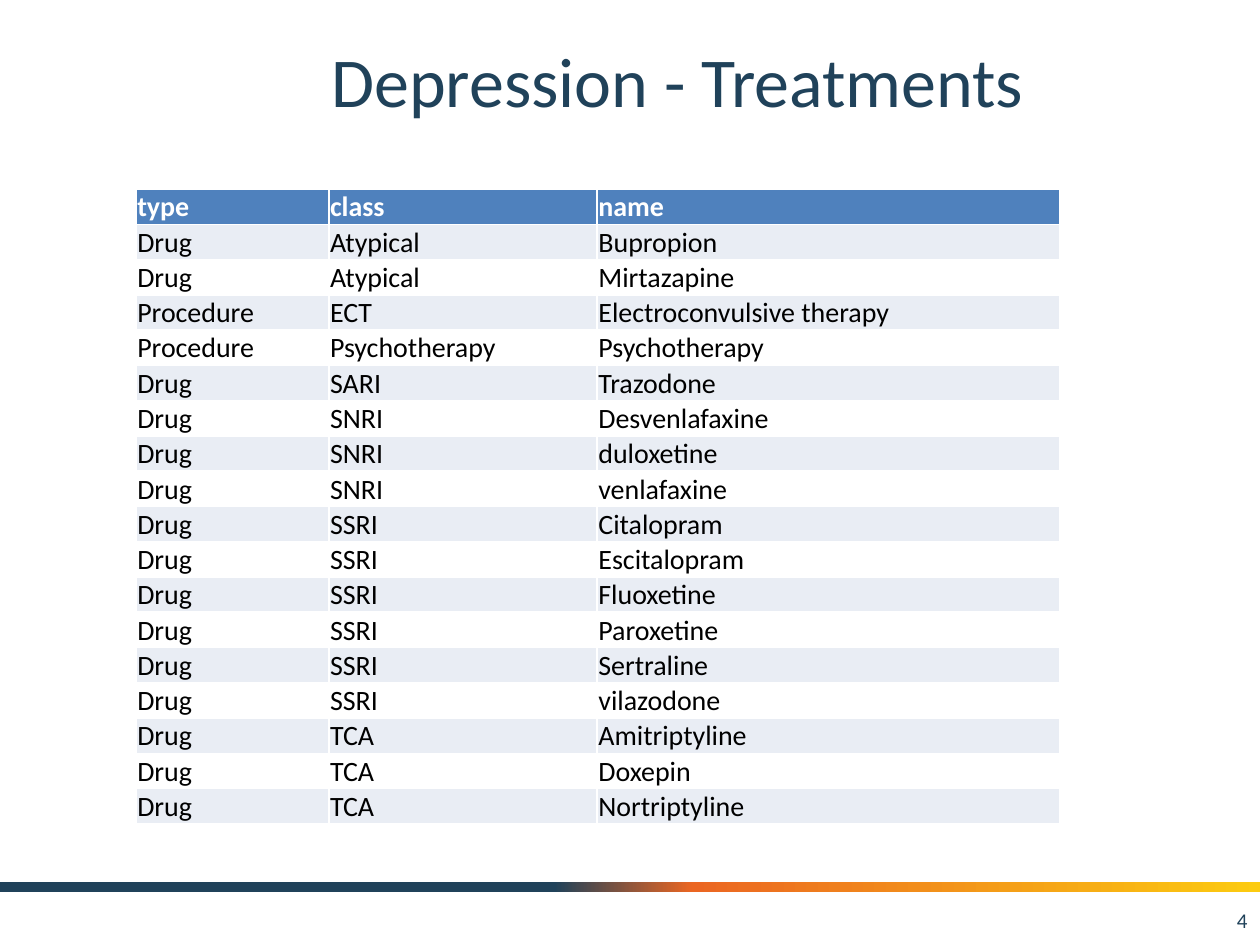
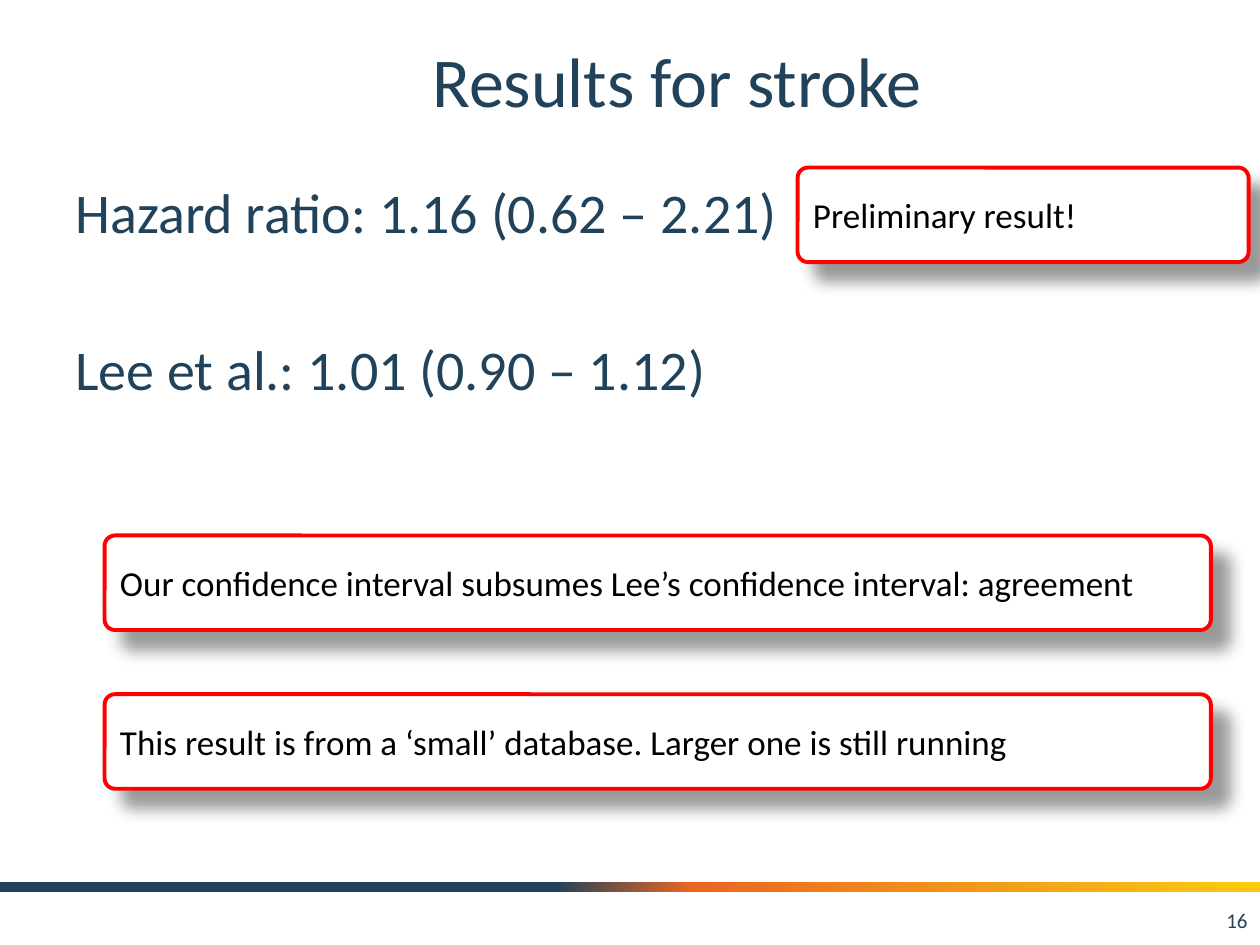
from lxml.etree import SubElement
from pptx import Presentation
from pptx.dml.color import RGBColor
from pptx.enum.shapes import MSO_SHAPE
from pptx.enum.text import MSO_ANCHOR, PP_ALIGN
from pptx.oxml.ns import qn
from pptx.util import Inches, Pt

# Shared look
FONT = "Calibri"
NAVY = RGBColor(0x20, 0x42, 0x5A)
ORANGE = RGBColor(0xEB, 0x66, 0x22)
YELLOW = RGBColor(0xFC, 0xCB, 0x10)
HEADER_BLUE = RGBColor(0x4F, 0x81, 0xBD)
BAND_GREY = RGBColor(0xE9, 0xED, 0xF4)
WHITE = RGBColor(0xFF, 0xFF, 0xFF)
BLACK = RGBColor(0x00, 0x00, 0x00)
RED = RGBColor(0xFF, 0x00, 0x00)
FOOTER_STOPS = [(44, NAVY), (55, ORANGE), (100, YELLOW)]

# Treatments: (type, class, names)
TREATMENTS = [
    ("Drug", "Atypical", ["Bupropion", "Mirtazapine"]),
    ("Procedure", "ECT", ["Electroconvulsive therapy"]),
    ("Procedure", "Psychotherapy", ["Psychotherapy"]),
    ("Drug", "SARI", ["Trazodone"]),
    ("Drug", "SNRI", ["Desvenlafaxine", "duloxetine", "venlafaxine"]),
    ("Drug", "SSRI", ["Citalopram", "Escitalopram", "Fluoxetine", "Paroxetine",
                      "Sertraline", "vilazodone"]),
    ("Drug", "TCA", ["Amitriptyline", "Doxepin", "Nortriptyline"]),
]
COLUMN_WIDTHS = [1.53, 2.13, 3.67]
ROW_HEIGHT = 0.28


def format_paragraph(paragraph, size, color, alignment=PP_ALIGN.LEFT, bold=False):
    paragraph.alignment = alignment
    for run in paragraph.runs:
        run.font.name = FONT
        run.font.size = Pt(size)
        run.font.color.rgb = color
        run.font.bold = bold


def add_text(slide, box, lines, size, alignment=PP_ALIGN.LEFT,
             anchor=MSO_ANCHOR.MIDDLE):
    shape = slide.shapes.add_textbox(*map(Inches, box))
    text_frame = shape.text_frame
    text_frame.word_wrap = True
    text_frame.vertical_anchor = anchor
    text_frame.text = "\n".join(lines)
    for paragraph in text_frame.paragraphs:
        format_paragraph(paragraph, size, NAVY, alignment)
    return text_frame


def add_footer_band(slide):
    band = slide.shapes.add_shape(
        MSO_SHAPE.RECTANGLE, 0, Inches(7), Inches(10), Inches(0.08))
    band.shadow.inherit = False
    band.line.fill.background()
    band.fill.gradient()
    band.fill.gradient_angle = 0
    stop_list = band._element.spPr.find(qn("a:gradFill")).find(qn("a:gsLst"))
    for old_stop in list(stop_list):
        stop_list.remove(old_stop)
    for percent, color in FOOTER_STOPS:
        stop = SubElement(stop_list, qn("a:gs"), pos=str(percent * 1000))
        SubElement(stop, qn("a:srgbClr"), val=str(color))


def add_base_slide(presentation, title, number):
    slide = presentation.slides.add_slide(presentation.slide_layouts[6])
    add_footer_band(slide)
    add_text(slide, (1.25, 0.17, 8.25, 0.92), [title], 40, PP_ALIGN.CENTER)
    add_text(slide, (7.67, 7.1, 2.33, 0.4), [str(number)], 12, PP_ALIGN.RIGHT)
    return slide


def add_treatment_table(slide, left, top):
    rows = [("type", "class", "name")]
    rows += [(kind, group, name) for kind, group, names in TREATMENTS
             for name in names]
    table = slide.shapes.add_table(
        len(rows), len(COLUMN_WIDTHS), Inches(left), Inches(top),
        Inches(sum(COLUMN_WIDTHS)), Inches(ROW_HEIGHT * len(rows))).table
    for column, width in zip(table.columns, COLUMN_WIDTHS):
        column.width = Inches(width)
    for row_index, values in enumerate(rows):
        table.rows[row_index].height = Inches(ROW_HEIGHT)
        is_header = row_index == 0
        band_color = BAND_GREY if row_index % 2 else WHITE
        for column_index, value in enumerate(values):
            cell = table.cell(row_index, column_index)
            cell.fill.solid()
            cell.fill.fore_color.rgb = HEADER_BLUE if is_header else band_color
            cell.margin_left = cell.margin_right = cell.margin_top = Inches(0.01)
            cell.margin_bottom = 0
            cell.vertical_anchor = MSO_ANCHOR.BOTTOM
            cell.text_frame.text = value
            format_paragraph(cell.text_frame.paragraphs[0], 16,
                             WHITE if is_header else BLACK, bold=is_header)


def add_drop_shadow(shape):
    shape.shadow.inherit = False
    effects = shape._element.spPr.find(qn("a:effectLst"))
    shadow = SubElement(effects, qn("a:outerShdw"), blurRad=str(Pt(9)),
                        dist=str(Pt(14)), dir=str(45 * 60000),
                        algn="tl", rotWithShape="0")
    color = SubElement(shadow, qn("a:srgbClr"), val=str(BLACK))
    SubElement(color, qn("a:alpha"), val="40000")


def add_callout(slide, left, top, width, text):
    callout = slide.shapes.add_shape(
        MSO_SHAPE.ROUNDED_RECTANGLE, Inches(left), Inches(top),
        Inches(width), Inches(0.75))
    callout.adjustments[0] = 0.11
    callout.fill.solid()
    callout.fill.fore_color.rgb = WHITE
    callout.line.color.rgb = RED
    callout.line.width = Pt(2.25)
    add_drop_shadow(callout)
    text_frame = callout.text_frame
    text_frame.word_wrap = True
    text_frame.vertical_anchor = MSO_ANCHOR.MIDDLE
    text_frame.text = text
    format_paragraph(text_frame.paragraphs[0], 20, BLACK)


def main():
    presentation = Presentation()
    presentation.slide_width = Inches(10)
    presentation.slide_height = Inches(7.5)

    # Treatments
    slide = add_base_slide(presentation, "Depression - Treatments", 4)
    add_treatment_table(slide, 1.08, 1.5)

    # Stroke results
    slide = add_base_slide(presentation, "Results for stroke", 16)
    results = add_text(
        slide, (0.5, 1.33, 9, 5.37),
        ["Hazard ratio: 1.16 (0.62 – 2.21)", "Lee et al.: 1.01 (0.90 – 1.12)"],
        32, anchor=MSO_ANCHOR.TOP)
    results.margin_top = Inches(0.08)
    results.paragraphs[1].space_before = Pt(51)
    add_callout(slide, 0.83, 4.25, 8.78,
                "Our confidence interval subsumes Lee’s confidence interval: agreement")
    add_callout(slide, 0.83, 5.51, 8.78,
                "This result is from a ‘small’ database. Larger one is still running")
    add_callout(slide, 6.33, 1.33, 3.58, "Preliminary result!")

    presentation.save("out.pptx")


if __name__ == "__main__":
    main()
